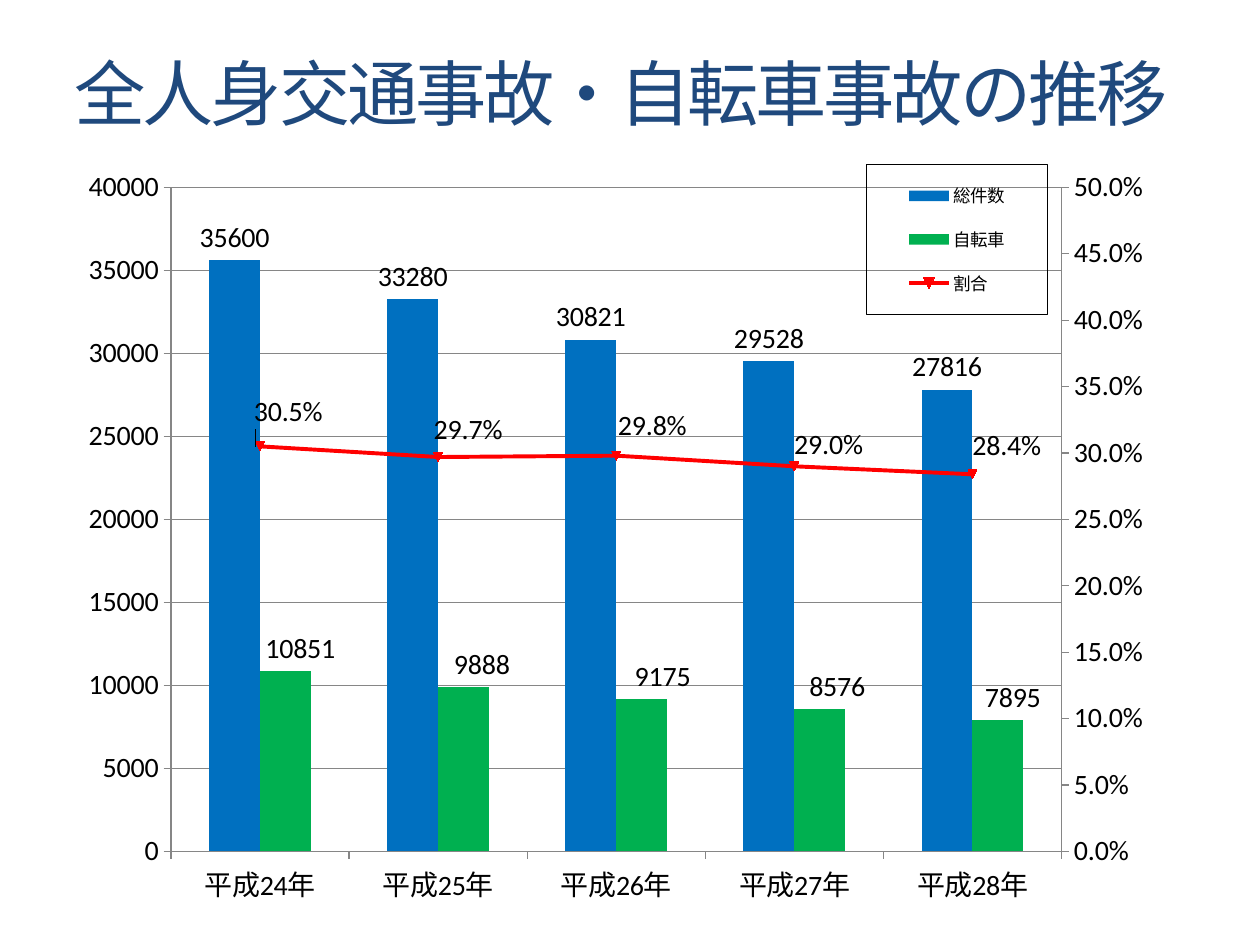
from dataclasses import dataclass

from pptx import Presentation
from pptx.chart.data import CategoryChartData
from pptx.dml.color import RGBColor
from pptx.enum.chart import XL_CHART_TYPE as ChartType
from pptx.enum.chart import XL_LABEL_POSITION as LabelPos
from pptx.enum.chart import XL_LEGEND_POSITION as LegendPos
from pptx.enum.chart import XL_TICK_MARK as TickMark
from pptx.enum.text import MSO_ANCHOR as Anchor
from pptx.enum.text import MSO_AUTO_SIZE as AutoSize
from pptx.enum.text import PP_ALIGN as Align
from pptx.oxml import parse_xml
from pptx.oxml.ns import nsdecls, qn
from pptx.util import Pt

FONT = "Calibri"
CHART_W, CHART_H = 697.7, 436.3
AXIS_GREY = "868686"


@dataclass
class Measure:
    name: str
    values: list[float]
    color: str
    number_format: str
    label_pos: LabelPos
    label_shifts: list[tuple[float, float]]


YEARS = [f"平成{year}年" for year in range(24, 29)]
MEASURES = [
    Measure("総件数", [35600, 33280, 30821, 29528, 27816], "0070C0",
            "General", LabelPos.OUTSIDE_END, []),
    Measure("自転車", [10851, 9888, 9175, 8576, 7895], "00B050",
            "General", LabelPos.OUTSIDE_END,
            [(8.5, 0), (10.5, 0), (12, 0), (10, 0), (8.5, 0)]),
    Measure("割合", [0.305, 0.297, 0.298, 0.29, 0.284], "FF0000",
            "0.0%", LabelPos.LEFT,
            [(41, -19.5), (42, -15), (45.5, -17), (44.5, -12), (44.5, -16)]),
]


def rgb(color: str) -> RGBColor:
    return RGBColor.from_string(color)


def layout(target: str = "", edge: bool = False, **lengths: float):
    totals = {"x": CHART_W, "y": CHART_H, "w": CHART_W, "h": CHART_H}
    parts = f'<c:layoutTarget val="{target}"/>' if target else ""
    if edge:
        parts += '<c:xMode val="edge"/><c:yMode val="edge"/>'
    for key, length in lengths.items():
        parts += f'<c:{key} val="{length / totals[key]:.4f}"/>'
    return parse_xml(f'<c:layout {nsdecls("c")}><c:manualLayout>{parts}'
                     '</c:manualLayout></c:layout>')


def set_layout(parent, index: int, new_layout) -> None:
    for old_layout in parent.findall(qn("c:layout")):
        parent.remove(old_layout)
    parent.insert(index, new_layout)


def move_to_right_axis(chart) -> None:
    rate = chart.plots[0].series[2]._element
    bars = rate.getparent()
    bars.remove(rate)
    for invert in rate.findall(qn("c:invertIfNegative")):
        rate.remove(invert)
    line_plot = parse_xml(
        f'<c:lineChart {nsdecls("c")}><c:grouping val="standard"/>'
        '<c:varyColors val="0"/><c:marker val="1"/>'
        '<c:axId val="5001"/><c:axId val="5002"/></c:lineChart>')
    line_plot.insert(2, rate)
    bars.addnext(line_plot)
    hidden_years = parse_xml(
        f'<c:catAx {nsdecls("c")}><c:axId val="5001"/><c:scaling>'
        '<c:orientation val="minMax"/></c:scaling><c:delete val="1"/>'
        '<c:axPos val="b"/><c:crossAx val="5002"/>'
        '<c:crosses val="autoZero"/></c:catAx>')
    percent_axis = parse_xml(
        f'<c:valAx {nsdecls("c", "a")}><c:axId val="5002"/><c:scaling>'
        '<c:orientation val="minMax"/><c:max val="0.5"/><c:min val="0"/>'
        '</c:scaling><c:delete val="0"/><c:axPos val="r"/>'
        '<c:numFmt formatCode="0.0%" sourceLinked="0"/>'
        '<c:majorTickMark val="out"/><c:minorTickMark val="none"/>'
        '<c:tickLblPos val="nextTo"/><c:spPr><a:ln w="9525"><a:solidFill>'
        f'<a:srgbClr val="{AXIS_GREY}"/></a:solidFill></a:ln></c:spPr>'
        '<c:crossAx val="5001"/><c:crosses val="max"/>'
        '<c:crossBetween val="between"/><c:majorUnit val="0.05"/></c:valAx>')
    last_axis = chart.value_axis._element
    last_axis.addnext(hidden_years)
    hidden_years.addnext(percent_axis)


def hide_leader_lines(labels_element) -> None:
    for leader in labels_element.findall(qn("c:showLeaderLines")):
        labels_element.remove(leader)
    labels_element.append(parse_xml(
        f'<c:extLst {nsdecls("c")}>'
        '<c:ext uri="{CE6537A1-D6FC-4f65-9D91-7224C49458BB}" xmlns:c15='
        '"http://schemas.microsoft.com/office/drawing/2012/chart">'
        '<c15:showLeaderLines val="0"/></c:ext></c:extLst>'))


def style_labels(series, measure: Measure) -> None:
    labels = series.data_labels
    labels.show_value = True
    labels.position = measure.label_pos
    labels.number_format = measure.number_format
    labels.number_format_is_linked = False
    for index, (x, y) in enumerate(measure.label_shifts):
        series.points[index].data_label.position = measure.label_pos
        label = labels._element.findall(qn("c:dLbl"))[index]
        set_layout(label, 1, layout(x=x, y=y))
    hide_leader_lines(labels._element)


def style_line(format_line, color: str, width: float) -> None:
    format_line.color.rgb = rgb(color)
    format_line.width = Pt(width)


def add_title(slide) -> None:
    title = slide.shapes.title
    title.left, title.top = Pt(25.2), Pt(24.5)
    title.width, title.height = Pt(659.5), Pt(90)
    frame = title.text_frame
    frame.text = "全人身交通事故・自転車事故の推移"
    frame.word_wrap = True
    frame.auto_size = AutoSize.NONE
    frame.vertical_anchor = Anchor.TOP
    frame.margin_left = frame.margin_right = Pt(0)
    paragraph = frame.paragraphs[0]
    paragraph.alignment = Align.CENTER
    run = paragraph.runs[0]
    run.font.size = Pt(40.7)
    run.font.name = FONT
    run.font.color.rgb = rgb("1F497D")
    run.font._element.set("spc", "-175")
    run.font._element.find(qn("a:latin")).addnext(
        parse_xml(f'<a:ea {nsdecls("a")} typeface="{FONT}"/>'))


def add_legend(chart) -> None:
    chart.has_legend = True
    legend = chart.legend
    legend.position = LegendPos.RIGHT
    legend.include_in_layout = False
    legend.font.size = Pt(10)
    legend.font.name = FONT
    legend.font.color.rgb = rgb("000000")
    element = legend._element
    set_layout(element, 1, layout(edge=True, x=458.5, y=5.5, w=103.5, h=85.5))
    element.find(qn("c:txPr")).addprevious(parse_xml(
        f'<c:spPr {nsdecls("c", "a")}><a:noFill/><a:ln w="9525"><a:solidFill>'
        '<a:srgbClr val="000000"/></a:solidFill></a:ln></c:spPr>'))


def add_accident_chart(slide) -> None:
    data = CategoryChartData()
    data.categories = YEARS
    for measure in MEASURES:
        data.add_series(measure.name, measure.values, measure.number_format)
    chart = slide.shapes.add_chart(
        ChartType.COLUMN_CLUSTERED, Pt(36.7), Pt(88.6),
        Pt(CHART_W), Pt(CHART_H), data).chart
    chart.has_title = False
    chart.font.size = Pt(16)
    chart.font.name = FONT
    chart.font.color.rgb = rgb("000000")

    counts = chart.value_axis
    counts.minimum_scale, counts.maximum_scale = 0, 40000
    counts.major_unit = 5000
    counts.has_major_gridlines = True
    style_line(counts.major_gridlines.format.line, AXIS_GREY, 0.75)
    for axis in (chart.category_axis, counts):
        axis.major_tick_mark = TickMark.OUTSIDE
        axis.minor_tick_mark = TickMark.NONE
        style_line(axis.format.line, AXIS_GREY, 0.75)

    move_to_right_axis(chart)
    columns, rates = chart.plots
    columns.gap_width = 150
    columns.overlap = 0
    columns.vary_by_categories = False
    for series, measure in zip([*columns.series, *rates.series], MEASURES):
        style_labels(series, measure)
    for series, measure in zip(columns.series, MEASURES):
        series.format.fill.solid()
        series.format.fill.fore_color.rgb = rgb(measure.color)

    rate, red = rates.series[0], MEASURES[2].color
    rate.smooth = False
    style_line(rate.format.line, red, 2.25)
    rate.marker.size = 5
    rate.marker.format.fill.solid()
    rate.marker.format.fill.fore_color.rgb = rgb(red)
    style_line(rate.marker.format.line, red, 0.75)

    add_legend(chart)
    set_layout(columns._element.getparent(), 0,
               layout("inner", True, x=61, y=18.5, w=509, h=379.5))


deck = Presentation()
deck.slide_width, deck.slide_height = Pt(720), Pt(540)
accident_slide = deck.slides.add_slide(deck.slide_layouts[5])
add_title(accident_slide)
add_accident_chart(accident_slide)
deck.save("out.pptx")
